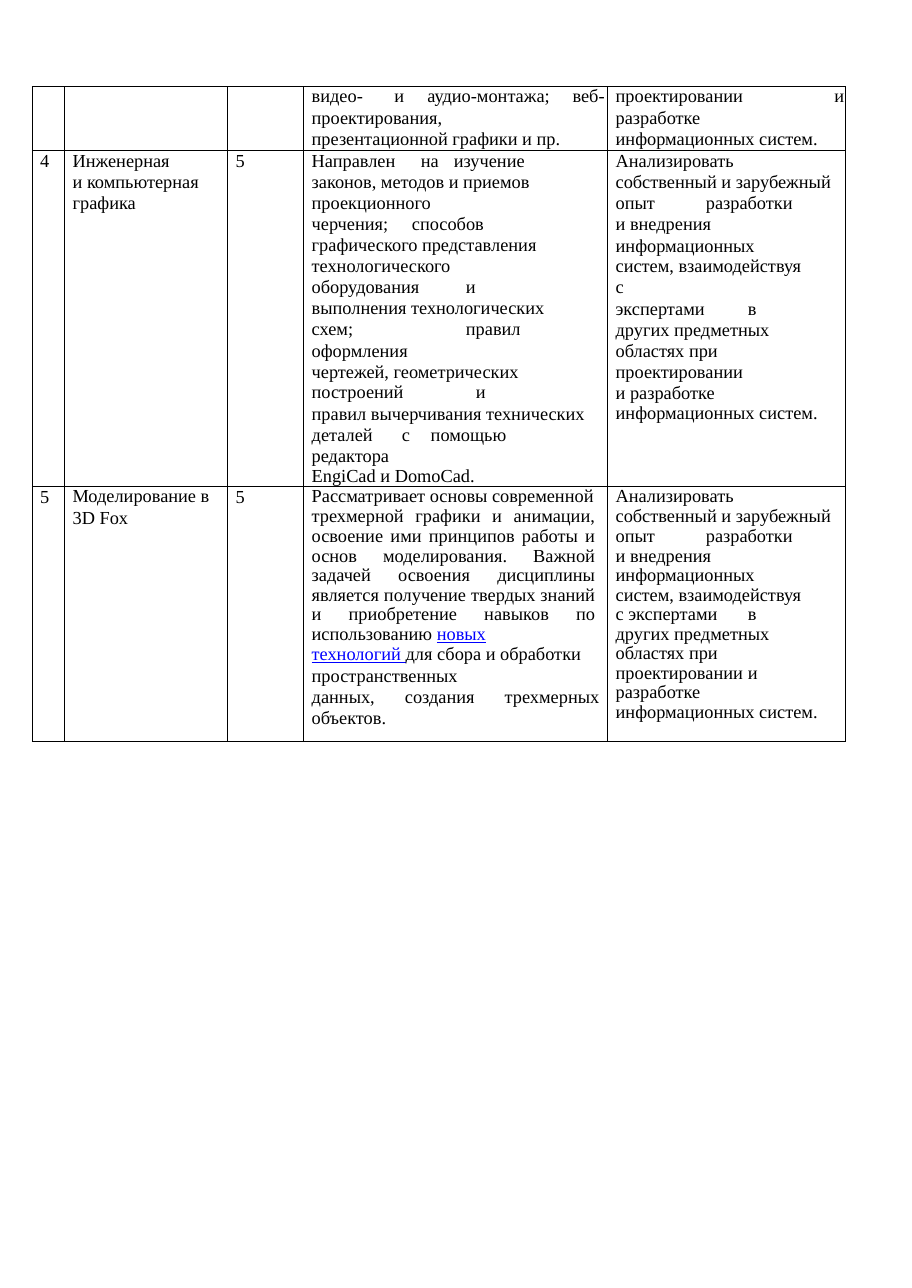
from dataclasses import dataclass

from lxml.etree import SubElement
from pptx import Presentation
from pptx.dml.color import RGBColor
from pptx.enum.text import PP_ALIGN as Align
from pptx.oxml import parse_xml
from pptx.oxml.ns import nsdecls, qn
from pptx.util import Pt

COLORS = {"text": "000000", "link": "0000FF", "border": "000000"}
FONT = "Times New Roman"
FONT_SIZE = 12
BORDER_WIDTH = 0.5
INDENT = 5.2
COLUMN_WIDTHS = [21.3, 106.6, 49.7, 198.7, 155.5]
ROW_HEIGHTS = [41.8, 152, 166.3]


@dataclass
class Para:
    text: str
    line: float = 13.7
    before: float = 0
    tabs: tuple = ()
    justified_margin: float = 0
    link: str = ""


def number(text):
    return [Para(text, 13.4)]


COURSES = [
    [
        [], [], [],
        [
            Para("видео-\tи\tаудио-монтажа;\tвеб-", 13.2, tabs=(54, 75.6, 170.5)),
            Para("проектирования,\vпрезентационной графики и пр.", before=0.4),
        ],
        [
            Para("проектировании\tи", 13.2, tabs=(143,)),
            Para("разработке\vинформационных систем.", before=0.4),
        ],
    ],
    [
        number("4"),
        [Para("Инженерная\vи компьютерная"), Para("графика", 13.6)],
        number("5"),
        [
            Para("Направлен\tна\tизучение\vзаконов, методов и приемов\vпроекционного",
                 tabs=(71.3, 92.9)),
            Para("черчения;\tспособов\vграфического представления\vтехнологического",
                 before=0.2, tabs=(65.5,)),
            Para("оборудования\tи\vвыполнения технологических\vсхем;\tправил",
                 before=0.2, tabs=(100.8,)),
            Para("оформления\vчертежей, геометрических\vпостроений\tи",
                 before=0.2, tabs=(107.3,)),
            Para("правил вычерчивания технических\vдеталей\tс\tпомощью\vредактора",
                 before=0.2, tabs=(59, 77.8)),
            Para("EngiCad и DomoCad.", 13.3),
        ],
        [
            Para("Анализировать\vсобственный и зарубежный"),
            Para("опыт\tразработки\vи внедрения", before=0.2, tabs=(59,)),
            Para("информационных\vсистем, взаимодействуя\vс", before=0.2),
            Para("экспертами\tв\vдругих предметных\vобластях при",
                 before=0.2, tabs=(86.4,)),
            Para("проектировании\vи разработке", before=0.2),
            Para("информационных систем.", 13.3),
        ],
    ],
    [
        number("5"),
        [Para("Моделирование в", 13.2), Para("3D Fox", 14.2)],
        number("5"),
        [
            Para("Рассматривает основы современной", 13.2, justified_margin=INDENT),
            Para("трехмерной графики и анимации, освоение ими принципов работы и "
                 "основ моделирования. Важной задачей освоения дисциплины является "
                 "получение твердых знаний и приобретение навыков по использованию новых",
                 0.96, 0.3, justified_margin=8, link="новых"),
            Para("технологий для сбора и обработки", 13.4, justified_margin=INDENT,
                 link="технологий "),
            Para("пространственных\vданных, создания трехмерных объектов.",
                 before=0.8, justified_margin=INDENT),
        ],
        [
            Para("Анализировать", 13.2),
            Para("собственный и зарубежный\vопыт\tразработки\vи внедрения\v"
                 "информационных\vсистем, взаимодействуя\vс экспертами\tв\v"
                 "других предметных\vобластях при\vпроектировании\tи\vразработке\v"
                 "информационных систем.", 0.96, 0.3, tabs=(59, 86.4, 118)),
        ],
    ],
]


def write_paragraph(paragraph, para):
    properties = paragraph._p.get_or_add_pPr()
    properties.set("marL", str(Pt(INDENT)))
    if para.justified_margin:
        properties.set("marR", str(Pt(para.justified_margin)))
        paragraph.alignment = Align.JUSTIFY
    if para.tabs:
        stops = SubElement(properties, qn("a:tabLst"))
        for position in para.tabs:
            SubElement(stops, qn("a:tab"), pos=str(Pt(position)), algn="l")
    paragraph.line_spacing = Pt(para.line) if para.line > 2 else para.line
    paragraph.space_before = Pt(para.before)
    if para.link:
        for part in para.text.partition(para.link):
            if part:
                paragraph.add_run().text = part
    else:
        paragraph.text = para.text
    for run in paragraph.runs:
        linked = bool(para.link) and run.text == para.link
        run.font.name = FONT
        run.font.size = Pt(FONT_SIZE)
        run.font.underline = linked
        run.font.color.rgb = RGBColor.from_string(COLORS["link" if linked else "text"])


def format_cell(cell):
    cell.margin_left = cell.margin_right = cell.margin_top = cell.margin_bottom = 0
    cell.fill.background()
    properties = cell._tc.get_or_add_tcPr()
    for position, side in enumerate("LRTB"):
        properties.insert(position, parse_xml(
            f'<a:ln{side} {nsdecls("a")} w="{Pt(BORDER_WIDTH)}"><a:solidFill>'
            f'<a:srgbClr val="{COLORS["border"]}"/></a:solidFill></a:ln{side}>'))


def add_course_table(slide, left, top, width, height):
    table = slide.shapes.add_table(
        len(ROW_HEIGHTS), len(COLUMN_WIDTHS),
        Pt(left), Pt(top), Pt(width), Pt(height)).table
    table.first_row = table.horz_banding = False
    for column, column_width in zip(table.columns, COLUMN_WIDTHS):
        column.width = Pt(column_width)
    for row, row_height, course in zip(table.rows, ROW_HEIGHTS, COURSES):
        row.height = Pt(row_height)
        for cell, paras in zip(row.cells, course):
            format_cell(cell)
            frame = cell.text_frame
            for index, para in enumerate(paras):
                paragraph = frame.add_paragraph() if index else frame.paragraphs[0]
                write_paragraph(paragraph, para)


def main():
    presentation = Presentation()
    presentation.slide_width = Pt(596.16)
    presentation.slide_height = Pt(841.68)
    slide = presentation.slides.add_slide(presentation.slide_layouts[6])
    add_course_table(slide, 21, 56.7, sum(COLUMN_WIDTHS), sum(ROW_HEIGHTS))
    presentation.save("out.pptx")


if __name__ == "__main__":
    main()
